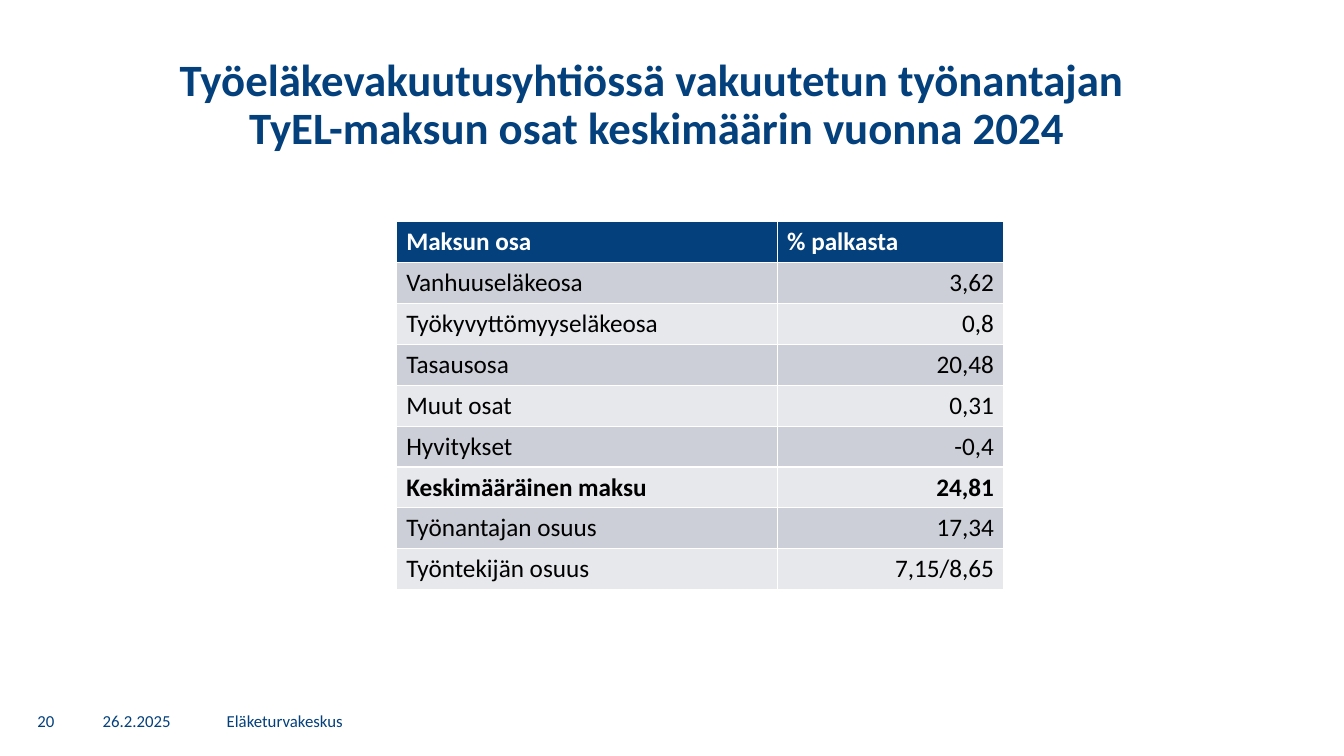
from dataclasses import dataclass

from pptx import Presentation
from pptx import util as u
from pptx.dml.color import RGBColor
from pptx.enum import text as t

NAVY = RGBColor(0x03, 0x40, 0x7C)
WHITE = RGBColor(0xFF, 0xFF, 0xFF)
BLACK = RGBColor(0, 0, 0)
DARK = RGBColor(0xCC, 0xCF, 0xD7)
LIGHT = RGBColor(0xE7, 0xE8, 0xEC)
WIDE, HIGH = 13.33, 7.5
FONT = "Calibri"
LEFT, MID, RIGHT = t.PP_ALIGN.LEFT, t.PP_ALIGN.CENTER, t.PP_ALIGN.RIGHT


@dataclass(frozen=True)
class Frame:
    x: float
    y: float
    w: float
    h: float

    def box(self) -> tuple:
        return (u.Inches(self.x * WIDE), u.Inches(self.y * HIGH),
                u.Inches(self.w * WIDE), u.Inches(self.h * HIGH))


@dataclass(frozen=True)
class Label:
    text: str
    x: float
    w: float
    align: t.PP_ALIGN = LEFT


@dataclass(frozen=True)
class Row:
    name: str
    value: str
    bold: bool = False


TITLE = Frame(0.0023, 0.0693, 0.973, 0.1947)
TABLE = Frame(0.2948, 0.2933, 0.4523, 0.4867)
SPLIT = 0.6267
FOOT_Y, FOOT_H = 0.9267, 0.0533
FOOT = [
    Label("26.2.2025", 0.069, 0.0848),
    Label("Eläketurvakeskus", 0.1613, 0.7697),
    Label("20", 0.015, 0.0383, MID),
]
ROWS = [
    Row("Maksun osa", "% palkasta", True),
    Row("Vanhuuseläkeosa", "3,62"),
    Row("Työkyvyttömyyseläkeosa", "0,8"),
    Row("Tasausosa", "20,48"),
    Row("Muut osat", "0,31"),
    Row("Hyvitykset", "-0,4"),
    Row("Keskimääräinen maksu", "24,81", True),
    Row("Työnantajan osuus", "17,34"),
    Row("Työntekijän osuus", "7,15/8,65"),
]


def style(frame, size: float, tint: RGBColor, bold: bool, align: t.PP_ALIGN) -> None:
    for par in frame.paragraphs:
        par.alignment = align
        for run in par.runs:
            font = run.font
            font.name, font.size, font.bold = FONT, u.Pt(size), bold
            font.color.rgb = tint


def head(slide) -> None:
    title = slide.shapes.title
    title.left, title.top, title.width, title.height = TITLE.box()
    frame = title.text_frame
    frame.text = ("Työeläkevakuutusyhtiössä vakuutetun työnantajan \v"
                  "TyEL-maksun osat keskimäärin vuonna 2024")
    frame.vertical_anchor = t.MSO_ANCHOR.TOP
    frame.auto_size = t.MSO_AUTO_SIZE.NONE
    frame.paragraphs[0].line_spacing = 0.9
    style(frame, 32, NAVY, True, MID)


def grid(slide) -> None:
    table = slide.shapes.add_table(len(ROWS), 2, *TABLE.box()).table
    for col, share in zip(table.columns, (SPLIT, 1 - SPLIT)):
        col.width = u.Inches(TABLE.w * WIDE * share)
    for i, row in enumerate(ROWS):
        fill = (LIGHT, DARK)[i % 2] if i else NAVY
        for j, word in enumerate((row.name, row.value)):
            cell = table.cell(i, j)
            cell.fill.solid()
            cell.fill.fore_color.rgb = fill
            cell.text_frame.text = word
            style(cell.text_frame, 18, BLACK if i else WHITE, row.bold,
                  RIGHT if i and j else LEFT)


def foot(slide, label: Label) -> None:
    area = Frame(label.x, FOOT_Y, label.w, FOOT_H)
    frame = slide.shapes.add_textbox(*area.box()).text_frame
    frame.word_wrap = True
    frame.vertical_anchor = t.MSO_ANCHOR.MIDDLE
    frame.text = label.text
    style(frame, 12, NAVY, False, label.align)


def main() -> None:
    deck = Presentation()
    deck.slide_width, deck.slide_height = u.Inches(WIDE), u.Inches(HIGH)
    slide = deck.slides.add_slide(deck.slide_layouts[5])
    head(slide)
    grid(slide)
    for label in FOOT:
        foot(slide, label)
    deck.save("out.pptx")


if __name__ == "__main__":
    main()
